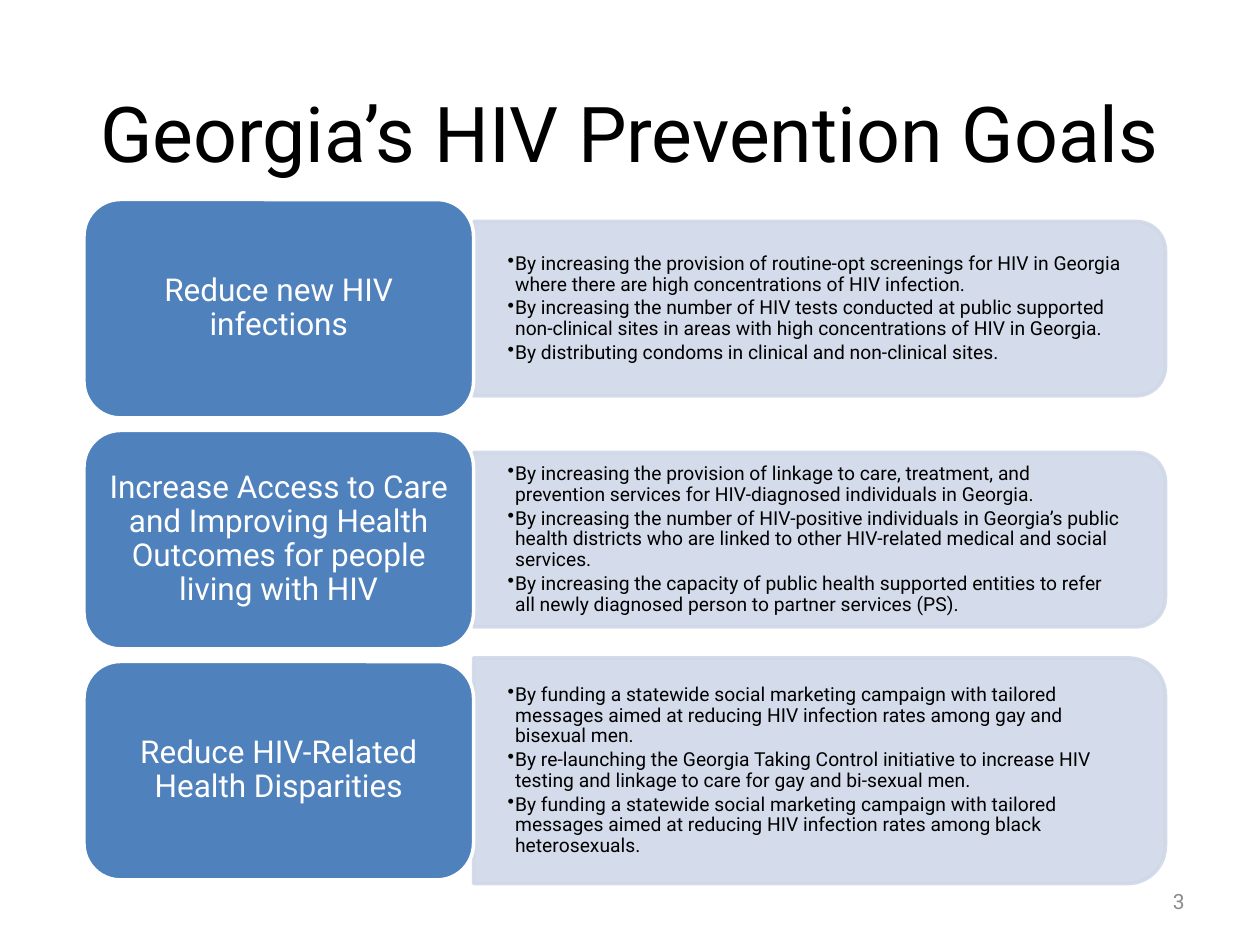
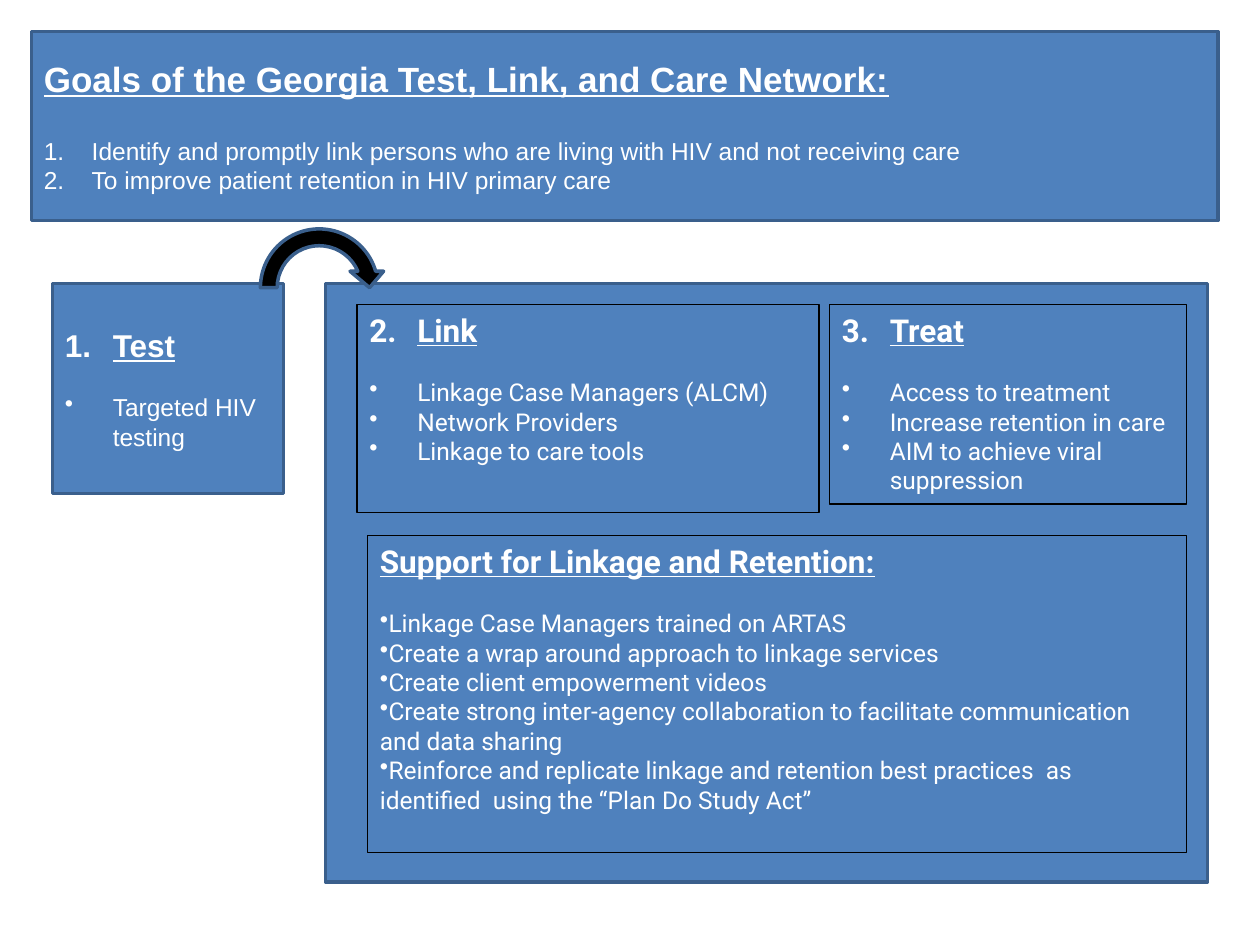
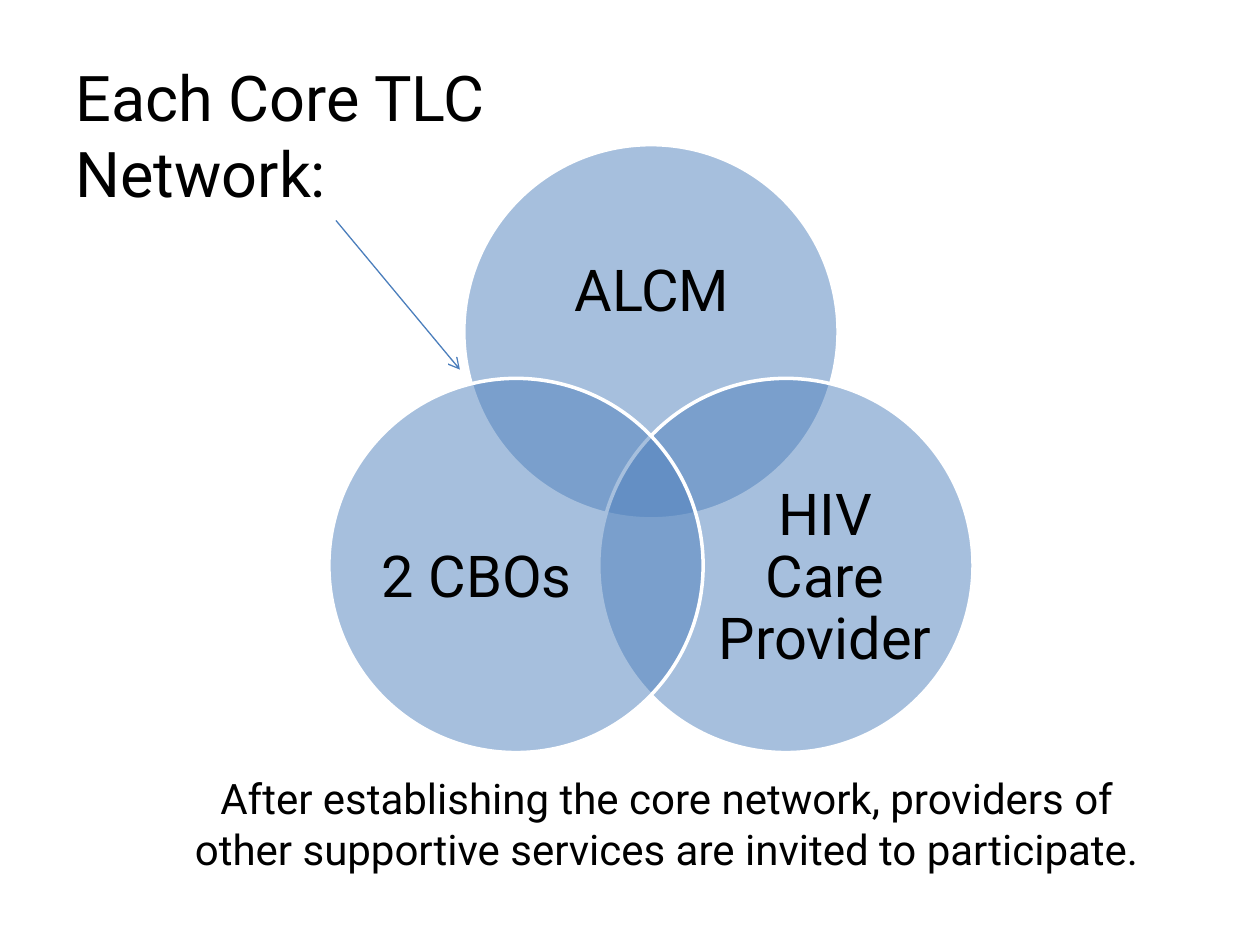
import dataclasses
import math

import pptx
import pptx.dml.color
import pptx.enum.shapes
import pptx.enum.text
import pptx.oxml.ns
import pptx.util

SHAPE = pptx.enum.shapes.MSO_SHAPE
ALIGN = pptx.enum.text.PP_ALIGN
ANCHOR = pptx.enum.text.MSO_ANCHOR
CELLS_PER_INCH = 12
BLUE, EDGE, PALE, ARROW = "4F81BD", "3A5F8C", "D0D8E8", "4B7EBC"
WHITE, BLACK, GRAY = "FFFFFF", "000000", "8C8C8C"
HANG = 0.38


@dataclasses.dataclass
class Box:
    """A box on the slide grid of 120 columns by 90 rows."""
    x: float
    y: float
    w: float
    h: float

    def at(self, x, y, w, h):
        """Return a box placed in cells from this box's corner."""
        return Box(self.x + x, self.y + y, w, h)

    def share(self, x, y, w, h):
        """Return a box placed in shares of this box's size."""
        return self.at(x * self.w, y * self.h, w * self.w, h * self.h)

    def centred(self, w, h):
        """Return a box of the given size about this box's centre."""
        return self.at((self.w - w) / 2, (self.h - h) / 2, w, h)

    def emu(self):
        """Return left, top, width and height as lengths."""
        return [cells(v) for v in (self.x, self.y, self.w, self.h)]


@dataclasses.dataclass
class Line:
    """One paragraph; a number as bullet starts a numbered list there."""
    text: str
    size: float
    bold: bool = False
    underline: bool = False
    bullet: object = None
    indent: float = 0
    before: float = 0


SLIDE = Box(0, 0, 120, 90)


def cells(count):
    """Turn grid cells into a length."""
    return pptx.util.Inches(count / CELLS_PER_INCH)


def rgb(hex_code):
    """Turn a hex string into a colour."""
    return pptx.dml.color.RGBColor.from_string(hex_code)


def child(parent, tag, **attributes):
    """Append a drawing element with attributes."""
    element = parent.makeelement(pptx.oxml.ns.qn(tag), attributes)
    parent.append(element)
    return element


def fade(colour_parent, opacity):
    """Set the opacity percentage of a solid colour."""
    for colour in colour_parent.iter(pptx.oxml.ns.qn("a:srgbClr")):
        child(colour, "a:alpha", val=str(opacity * 1000))


def add_shape(slide, kind, box, fill, line, width=2, fill_opacity=100, line_opacity=100):
    """Add a flat preset shape, left hollow when it has no fill."""
    shape = slide.shapes.add_shape(kind, *box.emu())
    shape.shadow.inherit = False
    if fill:
        shape.fill.solid()
        shape.fill.fore_color.rgb = rgb(fill)
    else:
        shape.fill.background()
    if fill_opacity < 100:
        fade(shape._element.spPr, fill_opacity)
    shape.line.color.rgb = rgb(line)
    shape.line.width = pptx.util.Pt(width)
    if line_opacity < 100:
        fade(shape.line._ln, line_opacity)
    return shape


def add_bullet(paragraph, bullet, indent):
    """Give a paragraph a hanging bullet or number."""
    props = paragraph._p.get_or_add_pPr()
    hang = pptx.util.Inches(indent)
    props.set("marL", str(hang))
    props.set("indent", str(-hang))
    if isinstance(bullet, int):
        child(props, "a:buAutoNum", type="arabicPeriod", startAt=str(bullet))
    else:
        child(props, "a:buChar", char=bullet)


def write(shape, lines, color=BLACK, font="Roboto", align=ALIGN.LEFT,
          anchor=ANCHOR.MIDDLE, insets=(0.1, 0.05), spacing=None):
    """Fill a shape with formatted paragraphs."""
    frame = shape.text_frame
    frame.word_wrap = True
    frame.vertical_anchor = anchor
    frame.margin_left = frame.margin_right = pptx.util.Inches(insets[0])
    frame.margin_top = frame.margin_bottom = pptx.util.Inches(insets[1])
    for index, line in enumerate(lines):
        paragraph = frame.add_paragraph() if index else frame.paragraphs[0]
        if line.bullet:
            add_bullet(paragraph, line.bullet, line.indent)
        paragraph.alignment = align
        if spacing:
            paragraph.line_spacing = spacing
        if line.before:
            paragraph.space_before = pptx.util.Pt(line.before)
        run = paragraph.add_run()
        run.text = line.text
        run.font.name = font
        run.font.size = pptx.util.Pt(line.size)
        run.font.bold = line.bold
        run.font.underline = line.underline
        run.font.color.rgb = rgb(color)


def add_text(slide, box, lines, **style):
    """Add a text box."""
    write(slide.shapes.add_textbox(*box.emu()), lines, **style)


def set_title(slide, box, text, size, **style):
    """Place and fill the title placeholder."""
    title = slide.shapes.title
    title.left, title.top, title.width, title.height = box.emu()
    write(title, [Line(text, size)], **style)


def headed_list(heading, items, size=18, number=None, bullet="•", indent=HANG, gap=16.4):
    """Return an underlined heading and its list."""
    head = Line(heading, size, True, True, number, HANG)
    return [head] + [Line(item, 14, bullet=bullet, indent=indent, before=0 if index else gap)
                     for index, item in enumerate(items)]


def goal_row(slide, tile_box, goal, actions, panel_height):
    """Draw a goal tile with its panel of actions."""
    panel = tile_box.at(tile_box.w, (tile_box.h - panel_height) / 2, 65.9, panel_height)
    backing = add_shape(slide, SHAPE.ROUND_2_SAME_RECTANGLE, panel.centred(panel.h, panel.w),
                        PALE, PALE, fill_opacity=90, line_opacity=90)
    backing.rotation = 90
    add_text(slide, panel.share(0, 0, 0.99, 1),
             [Line(action, 11, bullet="•", indent=0.06, before=1.7 if index else 0)
              for index, action in enumerate(actions)],
             insets=(0.27, 0.14), spacing=0.9)
    tile = add_shape(slide, SHAPE.ROUNDED_RECTANGLE, tile_box, BLUE, WHITE)
    write(tile, [Line(goal, 18)], color=WHITE, align=ALIGN.CENTER,
          insets=(0.07, 0.04), spacing=0.9)


def goals_slide(slide):
    """Build the prevention goals slide."""
    set_title(slide, SLIDE.at(2, 6, 116, 13), "Georgia’s HIV Prevention Goals", 44,
              align=ALIGN.CENTER)
    goals = [
        ("Reduce new HIV infections", 16.6, [
            "By increasing the provision of routine-opt screenings for HIV in Georgia "
            "where there are high concentrations of HIV infection.",
            "By increasing the number of HIV tests conducted at public supported "
            "non-clinical sites in areas with high concentrations of HIV in Georgia.",
            "By distributing condoms in clinical and non-clinical sites."]),
        ("Increase Access to Care and Improving Health Outcomes for people living with HIV", 16.6, [
            "By increasing the provision of linkage to care, treatment, and "
            "prevention services for HIV-diagnosed individuals in Georgia.",
            "By increasing the number of HIV-positive individuals in Georgia’s public health "
            "districts who are linked to other HIV-related medical and social services.",
            "By increasing the capacity of public health supported entities to refer "
            "all newly diagnosed person to partner services (PS)."]),
        ("Reduce HIV-Related Health Disparities", 21.5, [
            "By funding a statewide social marketing campaign with tailored messages "
            "aimed at reducing HIV infection rates among gay and bisexual men.",
            "By re-launching the Georgia Taking Control initiative to increase HIV "
            "testing and linkage to care for gay and bi-sexual men.",
            "By funding a statewide social marketing campaign with tailored messages "
            "aimed at reducing HIV infection rates among black heterosexuals."]),
    ]
    for row, (goal, panel_height, actions) in enumerate(goals):
        goal_row(slide, SLIDE.at(8, 19 + 22 * row, 37.1, 20.8), goal, actions, panel_height)
    add_text(slide, SLIDE.at(86, 83.4, 28, 4.8), [Line("3", 12)], color=GRAY, align=ALIGN.RIGHT)


def care_panel(slide, panel):
    """Draw the link and treat panel with its outlined sections."""
    add_shape(slide, SHAPE.RECTANGLE, panel, BLUE, EDGE)
    sections = [
        (panel.at(3, 2, 44, 19.8), headed_list("Link", [
            "Linkage Case Managers (ALCM)", "Network Providers", "Linkage to care tools"],
            number=2)),
        (panel.at(48, 2, 34, 19), headed_list("Treat", [
            "Access to treatment", "Increase retention in care",
            "AIM to achieve viral suppression"], number=3)),
        (panel.at(4, 24, 78, 30.2), headed_list("Support for Linkage and Retention:", [
            "Linkage Case Managers trained on ARTAS",
            "Create a wrap around approach to linkage services",
            "Create client empowerment videos",
            "Create strong inter-agency collaboration to facilitate communication "
            "and data sharing",
            "Reinforce and replicate linkage and retention best practices  as identified  "
            "using the “Plan Do Study Act”"], indent=0)),
    ]
    for box, lines in sections:
        section = add_shape(slide, SHAPE.RECTANGLE, box, None, BLACK, 0.75)
        write(section, lines, color=WHITE, anchor=ANCHOR.TOP)


def network_slide(slide):
    """Build the test, link and care slide."""
    care_panel(slide, SLIDE.at(31, 27, 84, 57))
    banner = add_shape(slide, SHAPE.RECTANGLE, SLIDE.at(3, 3, 113, 18), BLUE, EDGE)
    write(banner, headed_list("Goals of the Georgia Test, Link, and Care Network:", [
        "Identify and promptly link persons who are living with HIV and not receiving care",
        "To improve patient retention in HIV primary care"], size=20, bullet=1, gap=20.7),
        color=WHITE, font="Arial")
    test = add_shape(slide, SHAPE.RECTANGLE, SLIDE.at(5, 27, 22, 20), BLUE, EDGE)
    write(test, headed_list("Test", ["Targeted HIV testing"], number=1),
          color=WHITE, font="Arial")
    add_shape(slide, SHAPE.CIRCULAR_ARROW, SLIDE.at(24, 21, 12.8, 12.8), BLACK, EDGE)


def venn(slide, box):
    """Draw three overlapping circles spread evenly about the box's centre."""
    diameter, spread = 35.64, 14.84
    partners = [("ALCM", -90, (0.135, 0.17, 0.735, 0.45)),
                ("HIV Care Provider", 30, (0.305, 0.26, 0.6, 0.55)),
                ("2 CBOs", 150, (0.095, 0.26, 0.6, 0.55))]
    for partner, degrees, label in partners:
        angle = math.radians(degrees)
        circle = box.at(spread * math.cos(angle), spread * math.sin(angle),
                        box.w, box.h).centred(diameter, diameter)
        add_shape(slide, SHAPE.OVAL, circle, BLUE, WHITE, fill_opacity=50)
        add_text(slide, circle.share(*label), [Line(partner, 33)],
                 align=ALIGN.CENTER, insets=(0, 0), spacing=0.9)


def add_arrow(slide, start, end):
    """Draw a thin arrow between two grid points."""
    arrow = slide.shapes.add_connector(pptx.enum.shapes.MSO_CONNECTOR.STRAIGHT,
                                       *[cells(v) for v in start + end])
    arrow.line.color.rgb = rgb(ARROW)
    arrow.line.width = pptx.util.Pt(0.75)
    child(arrow.line._ln, "a:tailEnd", type="arrow")
    child(arrow._element.spPr, "a:effectLst")


def core_slide(slide):
    """Build the core network slide."""
    venn(slide, SLIDE.at(31.3, 13.8, 61.4, 65.28))
    set_title(slide, SLIDE.at(6, 5, 56, 15.7), "Each Core TLC Network:", 36, anchor=ANCHOR.TOP)
    add_arrow(slide, (32, 21), (43.8, 35.2))
    add_text(slide, SLIDE.at(16, 73, 95, 10.9),
             [Line("After establishing the core network, providers of other supportive "
                   "services are invited to participate.", 24)],
             align=ALIGN.CENTER, anchor=ANCHOR.TOP)


def main():
    """Build and save the presentation."""
    deck = pptx.Presentation()
    deck.slide_width, deck.slide_height = cells(SLIDE.w), cells(SLIDE.h)
    title_only, blank = deck.slide_layouts[5], deck.slide_layouts[6]
    for layout, build in ((title_only, goals_slide), (blank, network_slide),
                          (title_only, core_slide)):
        build(deck.slides.add_slide(layout))
    deck.save("out.pptx")


if __name__ == "__main__":
    main()
